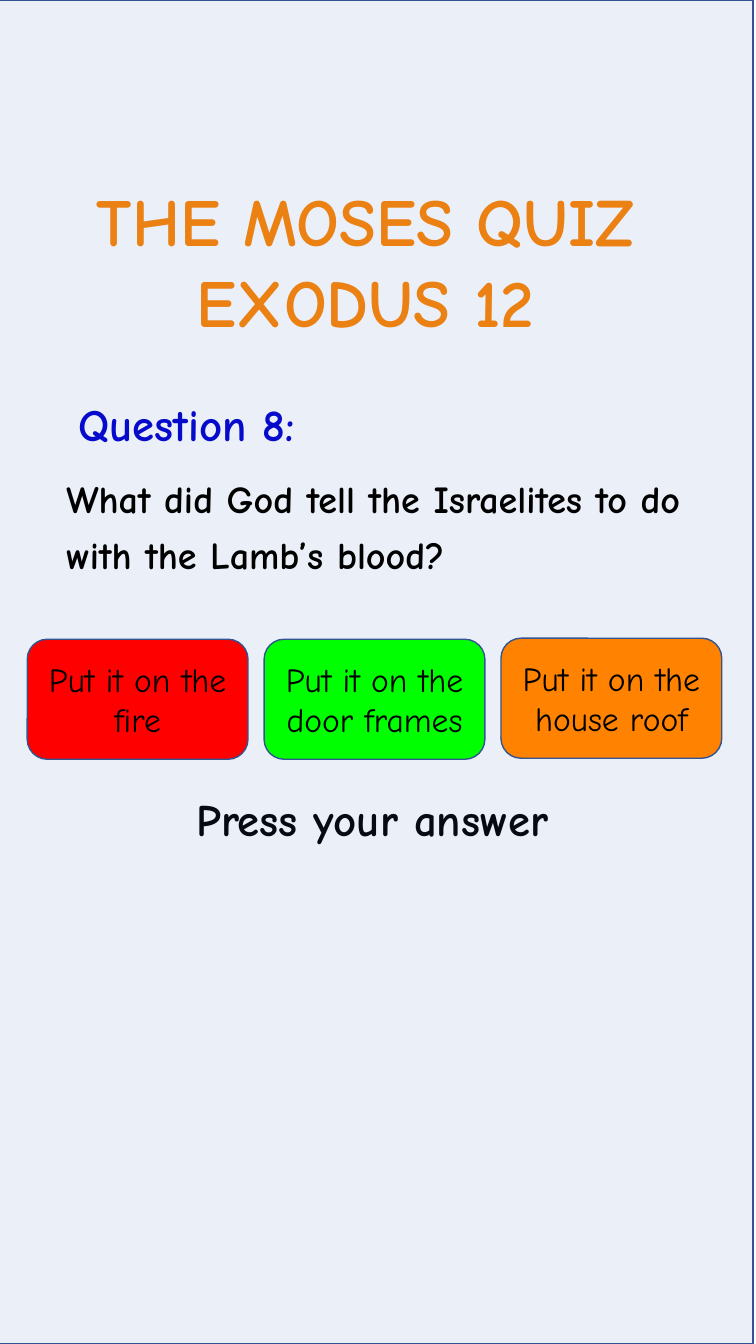
import pptx
import pptx.dml.color
import pptx.enum.shapes
import pptx.enum.text
import pptx.util
from lxml import etree

PX = 9144
FONT = "Comic Neue"
COLORS = {
    "orange": "FF8200",
    "blue": "0000CC",
    "black": "000000",
    "tint": "4472C4",
    "border": "325491",
    "red": "FF0000",
    "green": "00FF00",
}
ALIGN = pptx.enum.text.PP_ALIGN
ANCHOR = pptx.enum.text.MSO_ANCHOR
FIT = pptx.enum.text.MSO_AUTO_SIZE
PRESET = pptx.enum.shapes.MSO_SHAPE


def color(name):
    return pptx.dml.color.RGBColor.from_string(COLORS[name])


class QuizSlide:
    def __init__(self, width, height):
        self.deck = pptx.Presentation()
        self.deck.slide_width = width * PX
        self.deck.slide_height = height * PX
        self.slide = self.deck.slides.add_slide(self.deck.slide_layouts[5])

    def style(self, frame, text, size, ink, bold=True, align=ALIGN.CENTER,
              spacing=None, before=0):
        frame.text = text
        for paragraph in frame.paragraphs:
            paragraph.alignment = align
            paragraph.line_spacing = spacing
            paragraph.space_before = pptx.util.Pt(before)
            for run in paragraph.runs:
                run.font.name = FONT
                run.font.size = pptx.util.Pt(size)
                run.font.bold = bold
                run.font.color.rgb = color(ink)

    def title(self, box, text, size, ink):
        heading = self.slide.shapes.title
        heading.left, heading.top, heading.width, heading.height = (
            side * PX for side in box)
        frame = heading.text_frame
        self.style(frame, text, size, ink)
        frame.word_wrap = False
        frame.auto_size = FIT.SHAPE_TO_FIT_TEXT
        frame.vertical_anchor = ANCHOR.TOP

    def text(self, box, text, size, ink, wrap=True, **layout):
        frame = self.slide.shapes.add_textbox(*(side * PX for side in box)).text_frame
        frame.word_wrap = wrap
        frame.auto_size = FIT.NONE if wrap else FIT.SHAPE_TO_FIT_TEXT
        self.style(frame, text, size, ink, **layout)

    def panel(self, box, preset, fill):
        panel = self.slide.shapes.add_shape(preset, *(side * PX for side in box))
        panel.shadow.inherit = False
        panel.fill.solid()
        panel.fill.fore_color.rgb = color(fill)
        panel.line.color.rgb = color("border")
        panel.line.width = pptx.util.Pt(1)
        return panel

    def veil(self, box, fill, percent):
        veil = self.panel(box, PRESET.RECTANGLE, fill)
        tint = veil.fill._xPr.find(".//" + pptx.oxml.ns.qn("a:srgbClr"))
        alpha = etree.SubElement(tint, pptx.oxml.ns.qn("a:alpha"))
        alpha.set("val", str(percent * 1000))

    def answer(self, box, text, fill):
        button = self.panel(box, PRESET.ROUNDED_RECTANGLE, fill)
        frame = button.text_frame
        frame.word_wrap = True
        frame.vertical_anchor = ANCHOR.MIDDLE
        self.style(frame, text, 24, "black", bold=False)


def main():
    quiz = QuizSlide(750, 1333)
    quiz.title((30, 173, 689, 172), "THE MOSES QUIZ \nEXODUS 12 ", 48, "orange")
    quiz.text((47, 389, 277, 64), "Question 8:", 32, "blue", wrap=False)
    quiz.text((185, 786, 422, 72), "Press your answer", 32, "black",
              align=ALIGN.LEFT, spacing=0.9, before=7.5)
    quiz.veil((-3, 0, 750, 1333), "tint", 10)
    quiz.text((56, 456, 636, 146),
              "What did God tell the Israelites to do with the Lamb’s blood?",
              27.2, "black", align=ALIGN.LEFT, spacing=pptx.util.Pt(40), before=7.5)

    answers = [
        ("Put it on the fire", "red", 634),
        ("Put it on the door frames", "green", 634),
        ("Put it on the house roof", "orange", 633),
    ]
    for column, (text, fill, top) in enumerate(answers):
        quiz.answer((27 + 235 * column, top, 219, 119), text, fill)

    quiz.deck.save("out.pptx")


if __name__ == "__main__":
    main()
